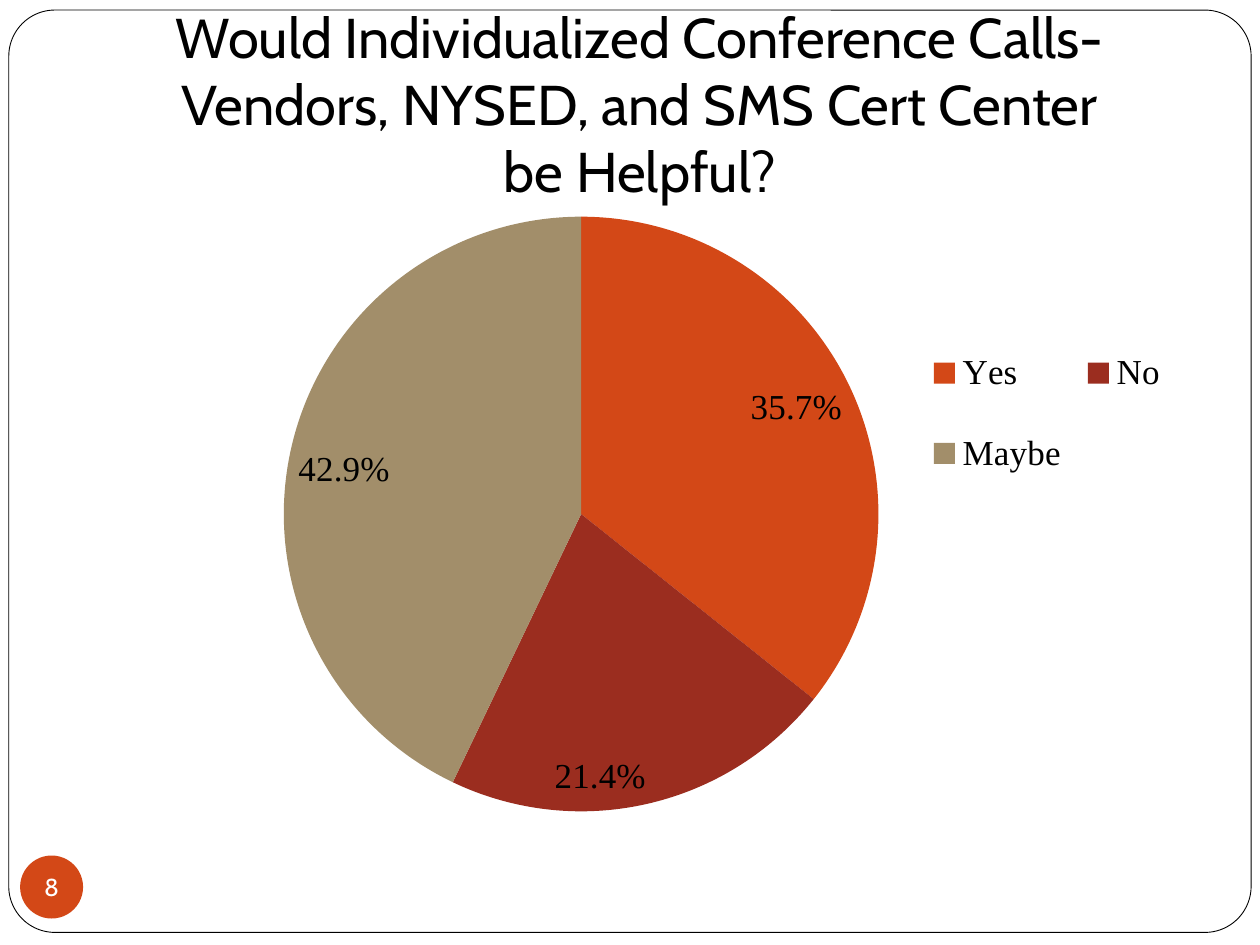
from lxml.etree import SubElement
from pptx import Presentation
from pptx.chart.data import CategoryChartData
from pptx.dml.color import RGBColor
from pptx.enum.chart import XL_CHART_TYPE as ChartType
from pptx.enum.chart import XL_LABEL_POSITION as LabelPosition
from pptx.enum.chart import XL_LEGEND_POSITION as LegendPosition
from pptx.enum.shapes import MSO_SHAPE as Preset
from pptx.enum.text import MSO_ANCHOR as Anchor
from pptx.enum.text import MSO_AUTO_SIZE as AutoSize
from pptx.enum.text import PP_ALIGN as Align
from pptx.oxml.ns import qn
from pptx.util import Inches, Pt

HEADING_FONT = "Cabin"
CHART_FONT = "Times New Roman"
ANSWERS = {
    "Yes": (0.357, "D34817"),
    "No": (0.214, "9B2D1F"),
    "Maybe": (0.429, "A28E6A"),
}


def color(value):
    return RGBColor.from_string(value)


def inches(box):
    return [Inches(length) for length in box]


def style_font(font, name, size, value):
    font.name = name
    font.size = Pt(size)
    font.color.rgb = color(value)


def set_margins(frame, box):
    frame.margin_left, frame.margin_top, frame.margin_right, frame.margin_bottom = inches(box)


def add_filled_shape(slide, preset, box, fill):
    shape = slide.shapes.add_shape(preset, *inches(box))
    shape.shadow.inherit = False
    shape.fill.solid()
    shape.fill.fore_color.rgb = color(fill)
    return shape


def add_frame(slide, box):
    frame = add_filled_shape(slide, Preset.ROUNDED_RECTANGLE, box, "FFFFFF")
    frame.adjustments[0] = 0.05
    frame.line.color.rgb = color("000000")
    frame.line.width = Pt(0.5)
    slide.shapes.element.insert(2, frame.element)


def place_title(slide, box, lines):
    title = slide.shapes.title
    title.left, title.top, title.width, title.height = inches(box)
    frame = title.text_frame
    frame.auto_size = AutoSize.NONE
    frame.word_wrap = True
    frame.vertical_anchor = Anchor.BOTTOM
    set_margins(frame, (0.1, 0.05, 0.1, 0.1))
    paragraph = frame.paragraphs[0]
    paragraph.alignment = Align.CENTER
    for index, line in enumerate(lines):
        if index:
            paragraph.add_line_break()
        run = paragraph.add_run()
        run.text = line
        style_font(run.font, HEADING_FONT, 32, "000000")


def set_layout(parent, position, box, inner=False):
    for old in parent.findall(qn("c:layout")):
        parent.remove(old)
    layout = SubElement(parent, qn("c:layout"))
    manual = SubElement(layout, qn("c:manualLayout"))
    settings = [("layoutTarget", "inner")] if inner else []
    settings += [("xMode", "edge"), ("yMode", "edge")]
    settings += zip("xywh", box)
    for name, value in settings:
        SubElement(manual, qn(f"c:{name}")).set("val", str(value))
    parent.insert(position, layout)


def add_answer_pie(slide, box):
    data = CategoryChartData(number_format="0.0%")
    data.categories = list(ANSWERS)
    data.add_series("Series 1", [share for share, _ in ANSWERS.values()])
    chart = slide.shapes.add_chart(ChartType.PIE, *inches(box), data).chart
    chart.has_title = False
    style_font(chart.font, CHART_FONT, 18, "000000")

    plot = chart.plots[0]
    plot.vary_by_categories = True
    for index, (_, fill) in enumerate(ANSWERS.values()):
        slice_format = plot.series[0].points[index].format
        slice_format.fill.solid()
        slice_format.fill.fore_color.rgb = color(fill)
        slice_format.line.fill.background()

    labels = plot.series[0].data_labels
    labels.show_value = True
    labels.show_percentage = False
    labels.number_format = "0.0%"
    labels.number_format_is_linked = False
    labels.position = LabelPosition.INSIDE_END
    style_font(labels.font, CHART_FONT, 20, "000000")

    chart.has_legend = True
    legend = chart.legend
    legend.position = LegendPosition.RIGHT
    legend.include_in_layout = False
    style_font(legend.font, CHART_FONT, 20, "000000")
    chart_element = chart.element.find(qn("c:chart"))
    set_layout(chart_element.find(qn("c:plotArea")), 0, (0.147, 0.028, 0.556, 0.944), True)
    set_layout(chart_element.find(qn("c:legend")), 1, (0.74, 0.18, 0.24, 0.32))


def add_page_badge(slide, box, number):
    badge = add_filled_shape(slide, Preset.OVAL, box, "D34817")
    badge.line.fill.background()
    frame = badge.text_frame
    frame.word_wrap = False
    frame.vertical_anchor = Anchor.MIDDLE
    set_margins(frame, (0, 0, 0, 0))
    paragraph = frame.paragraphs[0]
    paragraph.alignment = Align.CENTER
    run = paragraph.add_run()
    run.text = number
    style_font(run.font, HEADING_FONT, 14, "FFFFFF")


def main():
    presentation = Presentation()
    presentation.slide_width = Inches(10)
    presentation.slide_height = Inches(7.5)
    slide = presentation.slides.add_slide(presentation.slide_layouts[5])
    add_frame(slide, (0.07, 0.08, 9.86, 7.32))
    place_title(slide, (0.83, 0.17, 8.5, 1.55), [
        "Would Individualized Conference Calls- Vendors, NYSED, and SMS Cert Center",
        "be Helpful?",
    ])
    add_answer_pie(slide, (1, 1.58, 8.5, 5))
    add_page_badge(slide, (0.16, 6.79, 0.5, 0.5), "8")
    presentation.save("out.pptx")


if __name__ == "__main__":
    main()
